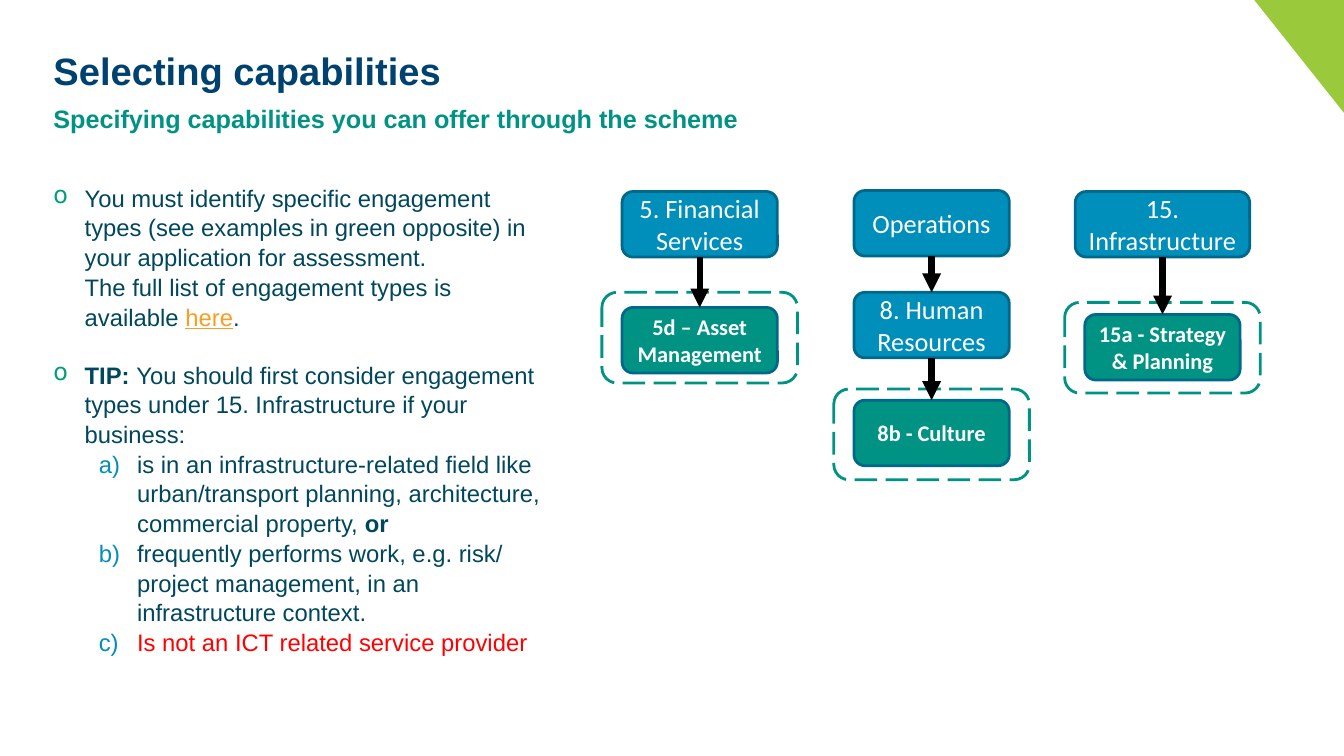
"""Build the slide on selecting capabilities."""
import pptx
import pptx.util
import pptx.dml.color
import pptx.enum.dml
import pptx.enum.shapes
import pptx.enum.text
import pptx.oxml
import pptx.oxml.ns

Inches, Pt = pptx.util.Inches, pptx.util.Pt
NAVY, TEAL, BLUE, EDGE = "00426F", "009383", "008EBA", "00698A"
TEXT, WHITE, BLACK = "00475D", "FFFFFF", "000000"


def tint(hue):
    return pptx.dml.color.RGBColor.from_string(hue)


def style(run, size, face, hue, bold):
    run.font.size, run.font.name, run.font.bold = Pt(size), face, bold
    run.font.color.rgb = tint(hue)


deck = pptx.Presentation()
deck.slide_width, deck.slide_height = Inches(13.33), Inches(7.5)
slide = deck.slides.add_slide(deck.slide_layouts[6])
shapes = slide.shapes

path = shapes.build_freeform(Inches(13.33), 0)
path.add_line_segments([(Inches(12.44), 0), (Inches(13.33), Inches(1.12))])
corner = path.convert_to_shape()
corner.shadow.inherit = False
corner.fill.solid()
corner.fill.fore_color.rgb = tint("9ACA3C")
corner.line.fill.background()

heads = [
    ("Selecting capabilities", 0.47, 8.18, 0.7, 27.2, NAVY),
    ("Specifying capabilities you can offer through the scheme", 1.03, 11.86, 0.3, 18, TEAL),
]
for text, top, width, height, size, hue in heads:
    frame = shapes.add_textbox(Inches(0.53), Inches(top), Inches(width), Inches(height)).text_frame
    frame.margin_left = frame.margin_top = frame.margin_right = frame.margin_bottom = 0
    frame.word_wrap = True
    frame.text = text
    style(frame.paragraphs[0].runs[0], size, "Arial", hue, True)

points = [
    (0, 0, [("You must identify specific engagement types (see examples in green opposite) in "
             "your application for assessment.\nThe full list of engagement types is available ",
             TEXT, False), ("here", "F99D24", False), (".", TEXT, False)]),
    (0, 20.4, [("TIP: ", TEXT, True),
               ("You should first consider engagement types under 15. Infrastructure "
                "if your business:", TEXT, False)]),
    (1, 0, [("is in an infrastructure-related field like urban/transport planning, "
             "architecture, commercial property, ", TEXT, False), ("or", TEXT, True)]),
    (1, 0, [("frequently performs work, e.g. risk/ project management, in an "
             "infrastructure context.", TEXT, False)]),
    (1, 0, [("Is not an ICT related service provider", "FF0000", False)]),
]
levels = [
    (0.31, -0.31, "009F7A", '<a:buChar {} char="o"/>'),
    (0.83, -0.38, BLUE, '<a:buAutoNum {} type="alphaLcParenR"/>'),
]
space = pptx.oxml.ns.nsdecls("a")
frame = shapes.add_textbox(Inches(0.53), Inches(1.76), Inches(4.95), Inches(4.71)).text_frame
frame.word_wrap = True
frame.margin_left = 0
for spot, (level, gap, parts) in enumerate(points):
    para = frame.add_paragraph() if spot else frame.paragraphs[0]
    para.level, para.line_spacing, para.space_before = level, 1.04, Pt(gap)
    left, hang, hue, mark = levels[level]
    props = para._p.get_or_add_pPr()
    props.set("marL", str(Inches(left)))
    props.set("indent", str(Inches(hang)))
    for code in (f'<a:buClr {space}><a:srgbClr val="{hue}"/></a:buClr>', mark.format(space)):
        props.append(pptx.oxml.parse_xml(code))
    for text, hue, bold in parts:
        start = len(para.runs)
        if start:
            para.add_run().text = text
        else:
            para.text = text
        for run in para.runs[start:]:
            style(run, 17, "Arial", hue, bold)
            if text == "here":
                run.font.underline = True

HIGH = 0.65
chains = [
    (6.94, 2.9, [("5. Financial Services", 1.9, 1.54), ("5d – Asset Management", 3.05, 1.54)]),
    (9.24, 3.86, [("Operations", 1.89, 1.54), ("8. Human Resources", 2.9, 1.54),
                  ("8b - Culture", 3.97, 1.54)]),
    (11.53, 3, [("15. Infrastructure", 1.9, 1.73), ("15a - Strategy & Planning", 3.12, 1.54)]),
]
for mid, rim, boxes in chains:
    for spot, (text, top, width) in enumerate(boxes):
        last = spot == len(boxes) - 1
        box = shapes.add_shape(pptx.enum.shapes.MSO_SHAPE.ROUNDED_RECTANGLE,
                               Inches(mid - width / 2), Inches(top), Inches(width), Inches(HIGH))
        box.shadow.inherit = False
        box.fill.solid()
        box.fill.fore_color.rgb = tint(TEAL if last else BLUE)
        box.line.color.rgb, box.line.width = tint(EDGE), Pt(2)
        frame = box.text_frame
        frame.word_wrap = True
        frame.vertical_anchor = pptx.enum.text.MSO_ANCHOR.MIDDLE
        frame.text = text
        frame.paragraphs[0].alignment = pptx.enum.text.PP_ALIGN.CENTER
        style(frame.paragraphs[0].runs[0], 16 if last else 18.8, "Calibri", WHITE, last)

    ring = shapes.add_shape(pptx.enum.shapes.MSO_SHAPE.ROUNDED_RECTANGLE,
                            Inches(mid - 0.97), Inches(rim), Inches(1.94), Inches(0.9))
    ring.shadow.inherit = False
    ring.fill.background()
    ring.line.color.rgb, ring.line.width = tint(TEAL), Pt(2)
    ring.line.dash_style = pptx.enum.dml.MSO_LINE.LONG_DASH

    for above, below in zip(boxes, boxes[1:]):
        arrow = shapes.add_connector(pptx.enum.shapes.MSO_CONNECTOR.STRAIGHT, Inches(mid),
                                     Inches(above[1] + HIGH), Inches(mid), Inches(below[1]))
        arrow.line.color.rgb, arrow.line.width = tint(BLACK), Pt(4.5)
        arrow.line._get_or_add_ln().append(
            pptx.oxml.parse_xml(f'<a:tailEnd {space} type="triangle"/>'))
        arrow._element.spPr.append(pptx.oxml.parse_xml(f"<a:effectLst {space}/>"))

deck.save("out.pptx")
